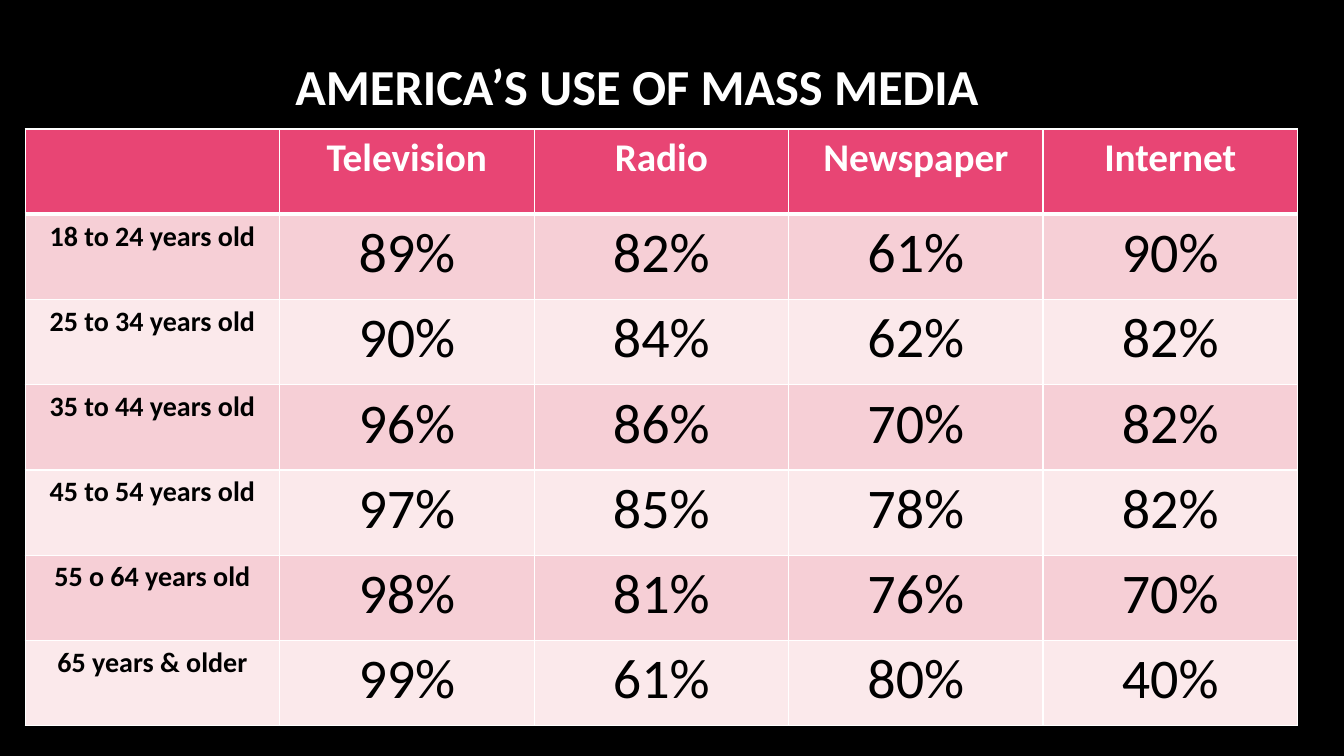
"""Build a slide with a table of media use by age group."""
from dataclasses import dataclass

from lxml.etree import SubElement
from pptx import Presentation
from pptx.dml.color import RGBColor
from pptx.enum.text import MSO_ANCHOR, PP_ALIGN
from pptx.oxml.ns import qn
from pptx.slide import Slide
from pptx.table import _Cell
from pptx.text.text import TextFrame
from pptx.util import Inches, Pt

BLACK = RGBColor(0x00, 0x00, 0x00)
WHITE = RGBColor(0xFF, 0xFF, 0xFF)
ROSE = RGBColor(0xE8, 0x45, 0x74)
PINK = RGBColor(0xF6, 0xCF, 0xD6)
PALE = RGBColor(0xFB, 0xE9, 0xEB)

FACE = "Calibri"
THIN, THICK = 1, 3
HEADS = ("", "Television", "Radio", "Newspaper", "Internet")


@dataclass(frozen=True)
class Style:
    size: int
    bold: bool
    color: RGBColor


@dataclass(frozen=True)
class Group:
    ages: str
    rates: tuple[int, ...]


TITLE = Style(36, True, WHITE)
HEAD = Style(28, True, WHITE)
AGE = Style(20, True, BLACK)
RATE = Style(40, False, BLACK)

GROUPS = (
    Group("18 to 24 years old", (89, 82, 61, 90)),
    Group("25 to 34 years old", (90, 84, 62, 82)),
    Group("35 to 44 years old", (96, 86, 70, 82)),
    Group("45 to 54 years old", (97, 85, 78, 82)),
    Group("55 o 64 years old", (98, 81, 76, 70)),
    Group("65 years & older", (99, 61, 80, 40)),
)


def write(frame: TextFrame, text: str, style: Style) -> None:
    """Put one centred line of styled text in a frame."""
    line = frame.paragraphs[0]
    line.alignment = PP_ALIGN.CENTER
    if not text:
        return
    run = line.add_run()
    run.text = text
    form = {"name": FACE, "size": Pt(style.size), "bold": style.bold}
    for key, value in form.items():
        setattr(run.font, key, value)
    run.font.color.rgb = style.color


def edge(cell: _Cell, top: int, base: int) -> None:
    """Draw white borders around a cell."""
    props = cell._tc.get_or_add_tcPr()
    sides = {"lnL": THIN, "lnR": THIN, "lnT": top, "lnB": base}
    for side, width in sides.items():
        line = SubElement(props, qn(f"a:{side}"), w=str(Pt(width)))
        fill = SubElement(line, qn("a:solidFill"))
        SubElement(fill, qn("a:srgbClr"), val=str(WHITE))


def add_title(slide: Slide) -> None:
    """Add the slide title."""
    box = slide.shapes.add_textbox(Inches(0.78), Inches(0.42), Inches(11.08), Inches(0.86))
    form = {"word_wrap": True, "vertical_anchor": MSO_ANCHOR.MIDDLE}
    for key, value in form.items():
        setattr(box.text_frame, key, value)
    write(box.text_frame, "AMERICA’S USE OF MASS MEDIA", TITLE)


def add_grid(slide: Slide) -> None:
    """Add the table with its header and banded rows."""
    rows = [HEADS] + [(g.ages, *(f"{rate}%" for rate in g.rates)) for g in GROUPS]
    table = slide.shapes.add_table(
        len(rows), len(HEADS), Inches(0.25), Inches(1.28), Inches(12.62), Inches(5.92)
    ).table
    for r, row in enumerate(rows):
        for c, text in enumerate(row):
            cell = table.cell(r, c)
            edge(cell, THICK if r == 1 else THIN, THICK if r == 0 else THIN)
            cell.fill.solid()
            cell.fill.fore_color.rgb = ROSE if r == 0 else (PALE, PINK)[r % 2]
            write(cell.text_frame, text, HEAD if r == 0 else RATE if c else AGE)


def main() -> None:
    """Build and save the slide."""
    deck = Presentation()
    size = {"slide_width": Inches(13.33), "slide_height": Inches(7.5)}
    for key, value in size.items():
        setattr(deck, key, value)
    slide = deck.slides.add_slide(deck.slide_layouts[6])
    slide.background.fill.solid()
    slide.background.fill.fore_color.rgb = BLACK
    add_title(slide)
    add_grid(slide)
    deck.save("out.pptx")


if __name__ == "__main__":
    main()
